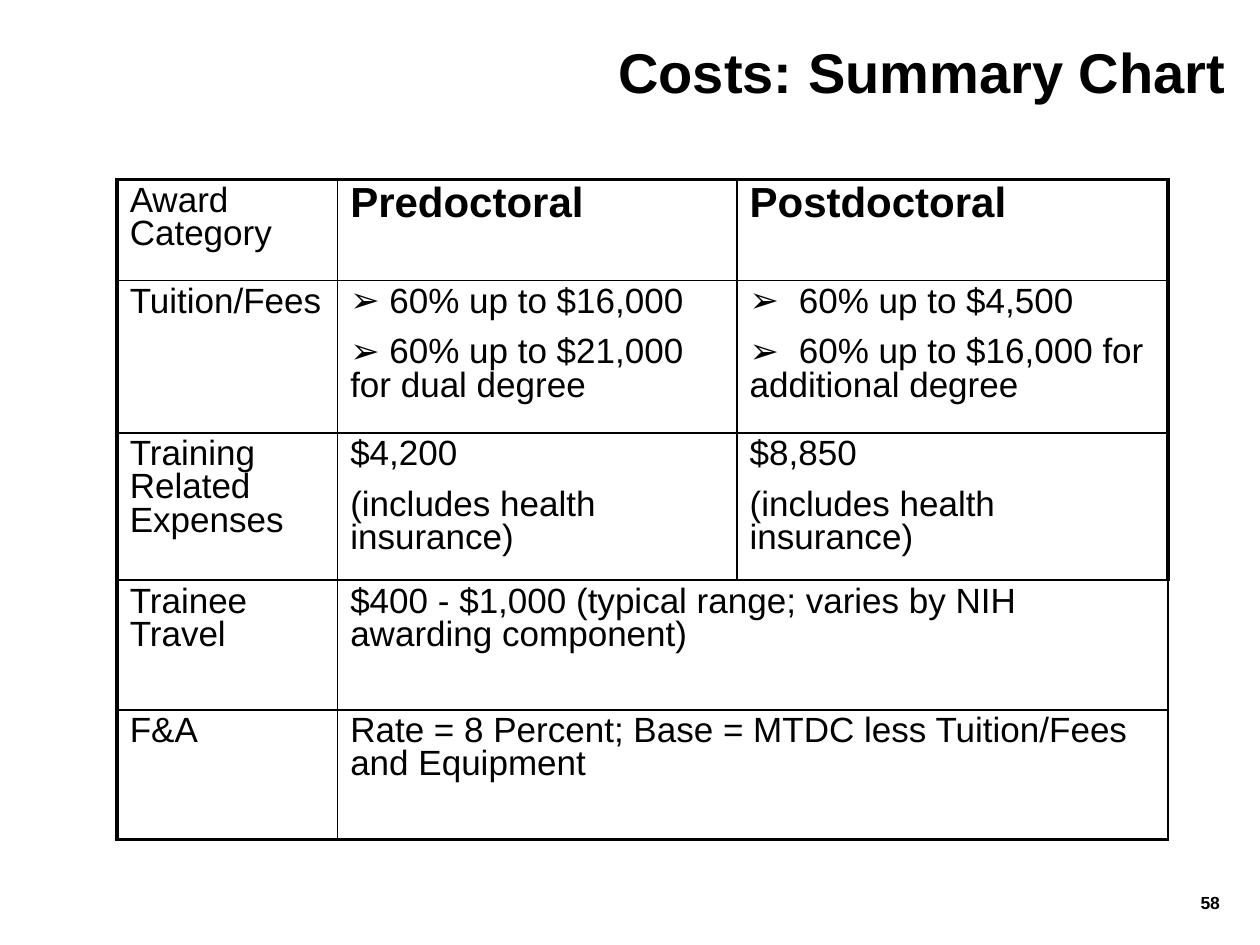
from dataclasses import dataclass

from lxml.etree import SubElement
from pptx import Presentation
from pptx.dml.color import RGBColor
from pptx.enum.text import MSO_ANCHOR as Anchor, PP_ALIGN as Align
from pptx.oxml import parse_xml
from pptx.oxml.ns import nsdecls, qn
from pptx.util import Inches, Pt

WIDTH, HEIGHT = Inches(10), Inches(7.5)
INK = "000000"
COLUMNS = (1.75, 3.17, 3.42)
ROWS = (0.8, 1.21, 1.17, 1.03, 1.03)
INNER, OUTER = 1, 2.25


@dataclass(frozen=True)
class Entry:
    """Content of one table cell, with its column span and text format."""

    row: int
    column: int
    lines: tuple[str, ...]
    span: int = 1
    size: int = 20
    bold: bool = False
    bullet_gap: float = 0


ENTRIES = (
    Entry(0, 0, ("Award\vCategory",)),
    Entry(0, 1, ("Predoctoral",), size=24, bold=True),
    Entry(0, 2, ("Postdoctoral",), size=24, bold=True),
    Entry(1, 0, ("Tuition/Fees",)),
    Entry(1, 1, ("60% up to $16,000", "60% up to $21,000 for dual degree"),
          bullet_gap=0.31),
    Entry(1, 2, ("60% up to $4,500", "60% up to $16,000 for additional degree"),
          bullet_gap=0.39),
    Entry(2, 0, ("Training Related Expenses",)),
    Entry(2, 1, ("$4,200", "(includes health insurance)")),
    Entry(2, 2, ("$8,850", "(includes health insurance)")),
    Entry(3, 0, ("Trainee Travel",)),
    Entry(3, 1, ("$400 - $1,000 (typical range; varies by NIH awarding component)",),
          span=2),
    Entry(4, 0, ("F&A",)),
    Entry(4, 1, ("Rate = 8 Percent; Base = MTDC less Tuition/Fees and Equipment",),
          span=2),
)


def colour(value: str) -> RGBColor:
    """Turn a hex string into a colour."""
    return RGBColor.from_string(value)


def apply(target, values: dict) -> None:
    """Set every attribute named in a dict of format values."""
    for name, value in values.items():
        setattr(target, name, value)


def write(para, text: str, size: int, bold: bool) -> None:
    """Write text into a paragraph and format its runs."""
    para.text = text
    for span in para.runs:
        apply(span.font, {"name": "Arial", "size": Pt(size), "bold": bold})
        span.font.color.rgb = colour(INK)


def add_bullet(para, gap: float) -> None:
    """Give a paragraph an arrow bullet and a tab stop for its first line."""
    props = para._p.get_or_add_pPr()
    apply_margins = {"marL": "0", "indent": "0"}
    for name, value in apply_margins.items():
        props.set(name, value)
    SubElement(props, qn("a:buFont"), typeface="Arial")
    SubElement(props, qn("a:buChar"), char="➢")
    tabs = SubElement(props, qn("a:tabLst"))
    SubElement(tabs, qn("a:tab"), pos=str(Inches(gap)), algn="l")


def add_borders(cell, row: int, column: int) -> None:
    """Draw thick lines on the table's rim and thin ones inside."""
    rim = {"L": column == 0, "R": column == len(COLUMNS) - 1,
           "T": row == 0, "B": row == len(ROWS) - 1}
    props = cell._tc.get_or_add_tcPr()
    for index, (side, on_rim) in enumerate(rim.items()):
        width = Pt(OUTER if on_rim else INNER)
        props.insert(index, parse_xml(
            f'<a:ln{side} {nsdecls("a")} w="{width}"><a:solidFill>'
            f'<a:srgbClr val="{INK}"/></a:solidFill></a:ln{side}>'))


def fill_entry(table, entry: Entry) -> None:
    """Place one entry in the table, merging columns where it spans."""
    cell = table.cell(entry.row, entry.column)
    if entry.span > 1:
        cell.merge(table.cell(entry.row, entry.column + entry.span - 1))
    frame = cell.text_frame
    for index, line in enumerate(entry.lines):
        para = frame.add_paragraph() if index else frame.paragraphs[0]
        para.line_spacing = 0.85
        para.space_before = Pt(10 if index else 0)
        if entry.bullet_gap:
            add_bullet(para, entry.bullet_gap)
            line = f"\t{line}"
        write(para, line, entry.size, entry.bold)


def add_cost_table(slide) -> None:
    """Build the table of costs by award category."""
    frame = slide.shapes.add_table(
        len(ROWS), len(COLUMNS), int(WIDTH * 0.093), int(HEIGHT * 0.19),
        Inches(sum(COLUMNS)), Inches(sum(ROWS)))
    table = frame.table
    apply(table, {"first_row": False, "horz_banding": False})
    for column, width in zip(table.columns, COLUMNS):
        column.width = Inches(width)
    for row, height in zip(table.rows, ROWS):
        row.height = Inches(height)
    for row in range(len(ROWS)):
        for column in range(len(COLUMNS)):
            cell = table.cell(row, column)
            cell.fill.background()
            add_borders(cell, row, column)
    for entry in ENTRIES:
        fill_entry(table, entry)


def add_heading(slide) -> None:
    """Move and format the title placeholder."""
    title = slide.shapes.title
    apply(title, {"left": int(WIDTH * 0.165), "top": int(HEIGHT * 0.023),
                  "width": int(WIDTH * 0.818), "height": int(HEIGHT * 0.105)})
    apply(title.text_frame, {"vertical_anchor": Anchor.MIDDLE, "word_wrap": True})
    para = title.text_frame.paragraphs[0]
    write(para, "Costs: Summary Chart", 32, True)
    para.alignment = Align.RIGHT


def add_page_number(slide) -> None:
    """Put the page number in the lower right corner."""
    box = slide.shapes.add_textbox(int(WIDTH * 0.936), int(HEIGHT * 0.937),
                                   int(WIDTH * 0.042), int(HEIGHT * 0.044))
    box.text_frame.word_wrap = True
    para = box.text_frame.paragraphs[0]
    write(para, "58", 10, True)
    para.alignment = Align.RIGHT


def main() -> None:
    """Build and save the deck."""
    deck = Presentation()
    apply(deck, {"slide_width": WIDTH, "slide_height": HEIGHT})
    page = deck.slides.add_slide(deck.slide_layouts[5])
    add_heading(page)
    add_cost_table(page)
    add_page_number(page)
    deck.save("out.pptx")


if __name__ == "__main__":
    main()
